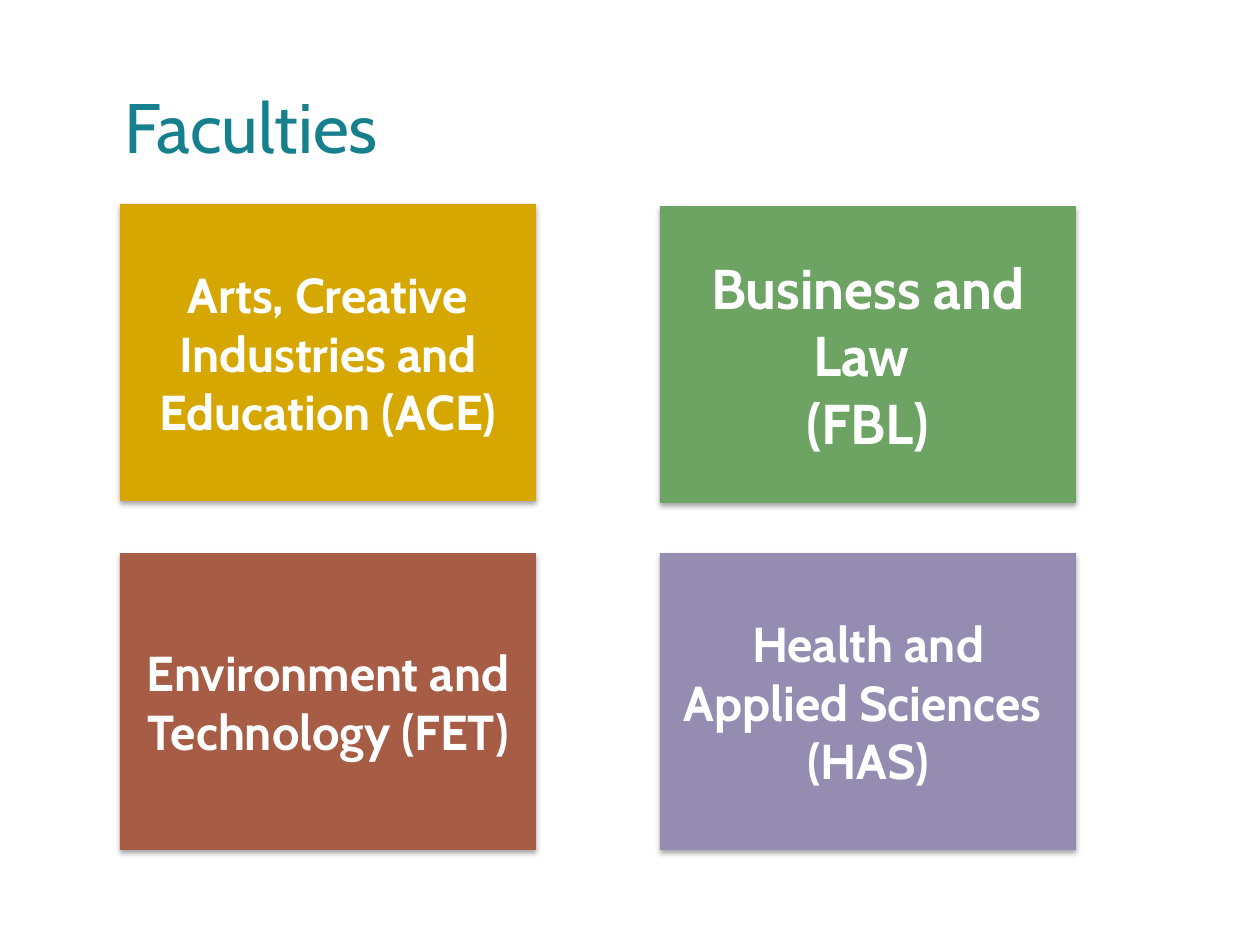
from pptx import Presentation
from pptx.dml.color import RGBColor
from pptx.enum.shapes import MSO_SHAPE
from pptx.enum.text import MSO_ANCHOR, PP_ALIGN
from pptx.util import Emu, Pt

PX = 914400 // 126
FONT = "Cabin"
COLORS = {
    "title": "16818D",
    "text": "FFFFFF",
    "arts": "D6A700",
    "law": "6DA463",
    "tech": "A65C45",
    "health": "958CB2",
}
CARDS = [
    ("arts", 0, 0, 28, ["Arts, Creative Industries and Education (ACE)"]),
    ("law", 540, 2, 32, ["Business and Law ", "(FBL)"]),
    ("tech", 0, 349, 28, ["Environment and Technology (FET)"]),
    ("health", 540, 349, 28, ["Health and Applied Sciences ", "(HAS)"]),
]


def color(name):
    return RGBColor.from_string(COLORS[name])


def scale(*box):
    return [Emu(n * PX) for n in box]


def write(para, text, size, name, bold):
    run = para.add_run()
    run.text = text
    font = run.font
    font.name, font.size, font.bold = FONT, Pt(size), bold
    font.color.rgb = color(name)


def title(slide, box):
    shape = slide.shapes.title
    shape.left, shape.top, shape.width, shape.height = scale(*box)
    frame = shape.text_frame
    frame.margin_left = frame.margin_right = 0
    frame.margin_top = frame.margin_bottom = 0
    frame.vertical_anchor = MSO_ANCHOR.TOP
    para = frame.paragraphs[0]
    para.alignment = PP_ALIGN.LEFT
    para.line_spacing = Pt(42)
    write(para, "Faculties", 40, "title", False)


def card(slide, box, fill, size, lines):
    shape = slide.shapes.add_shape(MSO_SHAPE.RECTANGLE, *scale(*box))
    shape.fill.solid()
    shape.fill.fore_color.rgb = color(fill)
    shape.line.fill.background()
    frame = shape.text_frame
    frame.word_wrap = True
    frame.vertical_anchor = MSO_ANCHOR.MIDDLE
    for i, line in enumerate(lines):
        para = frame.add_paragraph() if i else frame.paragraphs[0]
        para.alignment = PP_ALIGN.CENTER
        write(para, line, size, "text", True)


def grid(slide, left, top):
    for fill, dx, dy, size, lines in CARDS:
        card(slide, (left + dx, top + dy, 416, 297), fill, size, lines)


def main():
    deck = Presentation()
    deck.slide_width, deck.slide_height = scale(1260, 945)
    slide = deck.slides.add_slide(deck.slide_layouts[5])
    title(slide, (124, 94, 898, 90))
    grid(slide, 120, 204)
    deck.save("out.pptx")


if __name__ == "__main__":
    main()
